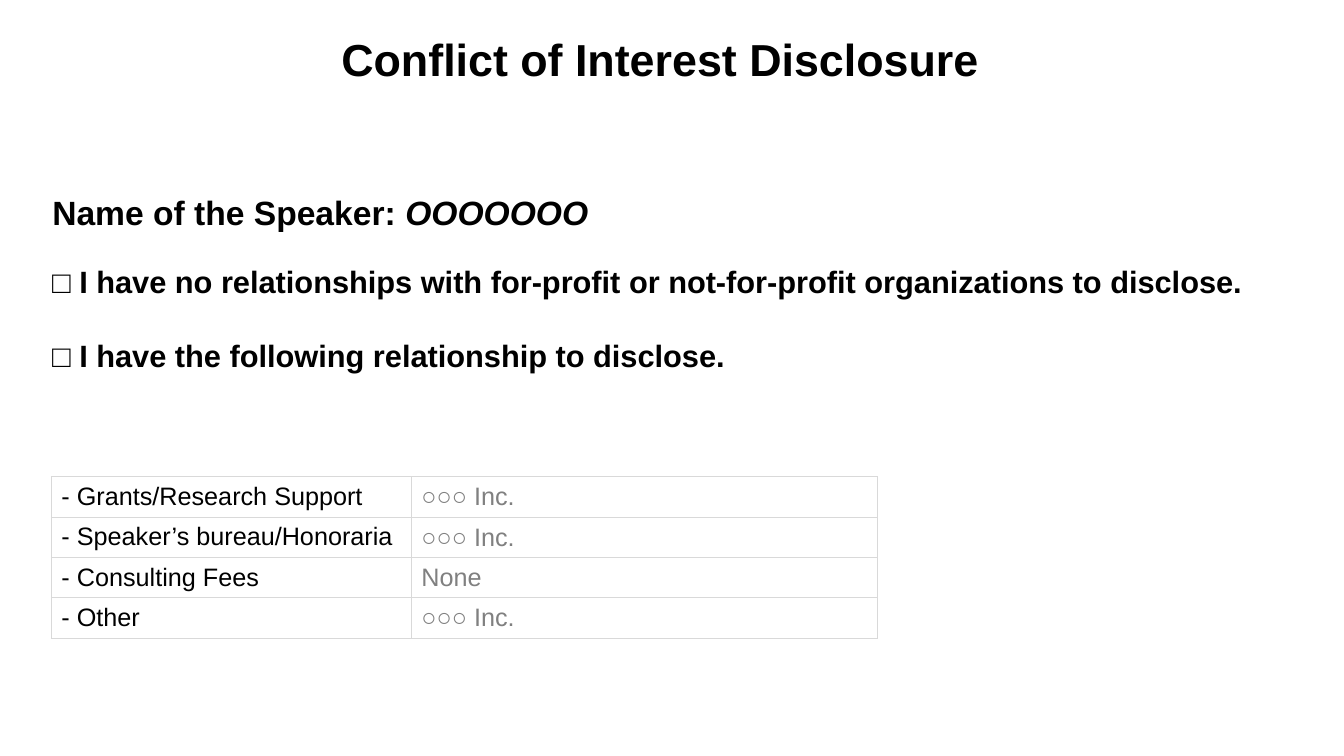
from dataclasses import dataclass

from lxml import etree
from pptx import Presentation
from pptx import util as u
from pptx.dml.color import RGBColor
from pptx.enum import text
from pptx.oxml import ns

EMU_PER_PX = 9144  # 100 px to the inch


@dataclass(frozen=True)
class Theme:
    font: str = "Arial"
    ink: str = "000000"
    answer: str = "808080"
    rule: str = "D9D9D9"
    paper: str = "FFFFFF"
    title_pt: int = 32
    speaker_pt: int = 24
    statement_pt: int = 22
    table_pt: int = 18
    rule_pt: int = 1


@dataclass(frozen=True)
class Box:
    left: int
    top: int
    width: int
    height: int

    def emu(self) -> tuple[int, int, int, int]:
        return px(self.left), px(self.top), px(self.width), px(self.height)


@dataclass(frozen=True)
class Run:
    words: str
    size: int
    color: str
    bold: bool = True
    italic: bool = False


@dataclass(frozen=True)
class TextBlock:
    box: Box
    lines: list[list[Run]]
    centered: bool = False
    line_spacing: float = 1.0
    gap_pt: int = 0


@dataclass(frozen=True)
class Disclosure:
    category: str
    answer: str


THEME = Theme()
SPONSOR = "○○○ Inc."

HEADING = TextBlock(
    Box(80, -11, 1150, 145),
    [[Run("Conflict of Interest Disclosure", THEME.title_pt, THEME.ink)]],
    centered=True,
    line_spacing=0.9,
)
SPEAKER = TextBlock(
    Box(42, 185, 1072, 50),
    [[
        Run("Name of the Speaker: ", THEME.speaker_pt, THEME.ink),
        Run("OOOOOOO", THEME.speaker_pt, THEME.ink, italic=True),
    ]],
)
STATEMENTS = TextBlock(
    Box(42, 256, 1240, 121),
    [
        [Run(f"□ {statement}", THEME.statement_pt, THEME.ink)]
        for statement in (
            "I have no relationships with for-profit or not-for-profit organizations to disclose.",
            "I have the following relationship to disclose.",
        )
    ],
    gap_pt=26,
)
DISCLOSURES = [
    Disclosure("Grants/Research Support", SPONSOR),
    Disclosure("Speaker’s bureau/Honoraria", SPONSOR),
    Disclosure("Consulting Fees", "None"),
    Disclosure("Other", SPONSOR),
]
TABLE_BOX = Box(51, 473, 819, 160)
COLUMN_WIDTHS = (357, 462)


def px(length: int) -> int:
    return u.Emu(length * EMU_PER_PX)


def add_run(paragraph, run: Run) -> None:
    piece = paragraph.add_run()
    piece.text = run.words
    font = piece.font
    font.name = THEME.font
    font.size = u.Pt(run.size)
    font.bold = run.bold
    font.italic = run.italic
    font.color.rgb = RGBColor.from_string(run.color)


def add_text_block(slide, block: TextBlock) -> None:
    frame = slide.shapes.add_textbox(*block.box.emu()).text_frame
    frame.word_wrap = True
    if block.centered:
        frame.vertical_anchor = text.MSO_ANCHOR.MIDDLE
    for index, line in enumerate(block.lines):
        paragraph = frame.add_paragraph() if index else frame.paragraphs[0]
        paragraph.line_spacing = block.line_spacing
        if index:
            paragraph.space_before = u.Pt(block.gap_pt)
        if block.centered:
            paragraph.alignment = text.PP_ALIGN.CENTER
        for run in line:
            add_run(paragraph, run)


def outline_cell(cell) -> None:
    """Rule all four sides; borders must come before the cell's fill."""
    properties = cell._tc.get_or_add_tcPr()
    for side in ("lnL", "lnR", "lnT", "lnB"):
        border = etree.SubElement(
            properties, ns.qn(f"a:{side}"), w=str(u.Pt(THEME.rule_pt))
        )
        fill = etree.SubElement(border, ns.qn("a:solidFill"))
        etree.SubElement(fill, ns.qn("a:srgbClr"), val=THEME.rule)


def fill_cell(cell, words: str, color: str, anchor: text.MSO_ANCHOR) -> None:
    outline_cell(cell)
    cell.fill.solid()
    cell.fill.fore_color.rgb = RGBColor.from_string(THEME.paper)
    cell.vertical_anchor = anchor
    run = Run(words, THEME.table_pt, color, bold=False)
    add_run(cell.text_frame.paragraphs[0], run)


def add_disclosure_table(slide, disclosures: list[Disclosure]) -> None:
    table = slide.shapes.add_table(
        len(disclosures), len(COLUMN_WIDTHS), *TABLE_BOX.emu()
    ).table
    table.first_row = False
    table.horz_banding = False
    for column, width in zip(table.columns, COLUMN_WIDTHS):
        column.width = px(width)
    middle = text.MSO_ANCHOR.MIDDLE
    for index, disclosure in enumerate(disclosures):
        category_anchor = text.MSO_ANCHOR.TOP if index == 1 else middle
        fill_cell(
            table.cell(index, 0), f"- {disclosure.category}", THEME.ink, category_anchor
        )
        fill_cell(table.cell(index, 1), disclosure.answer, THEME.answer, middle)


def main() -> None:
    deck = Presentation()
    deck.slide_width, deck.slide_height = px(1333), px(750)
    slide = deck.slides.add_slide(deck.slide_layouts[6])
    for block in (HEADING, SPEAKER, STATEMENTS):
        add_text_block(slide, block)
    add_disclosure_table(slide, DISCLOSURES)
    deck.save("out.pptx")


if __name__ == "__main__":
    main()
